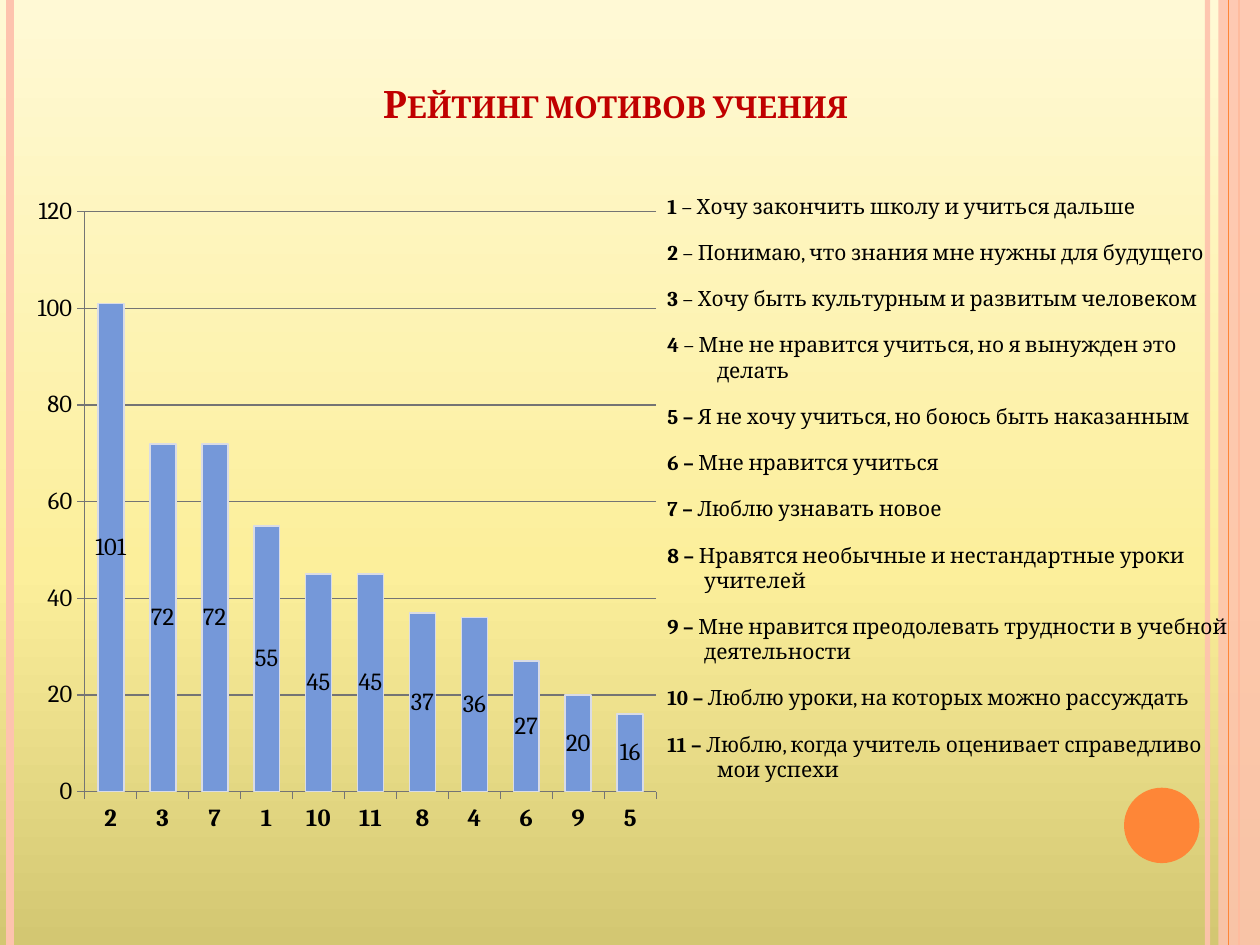
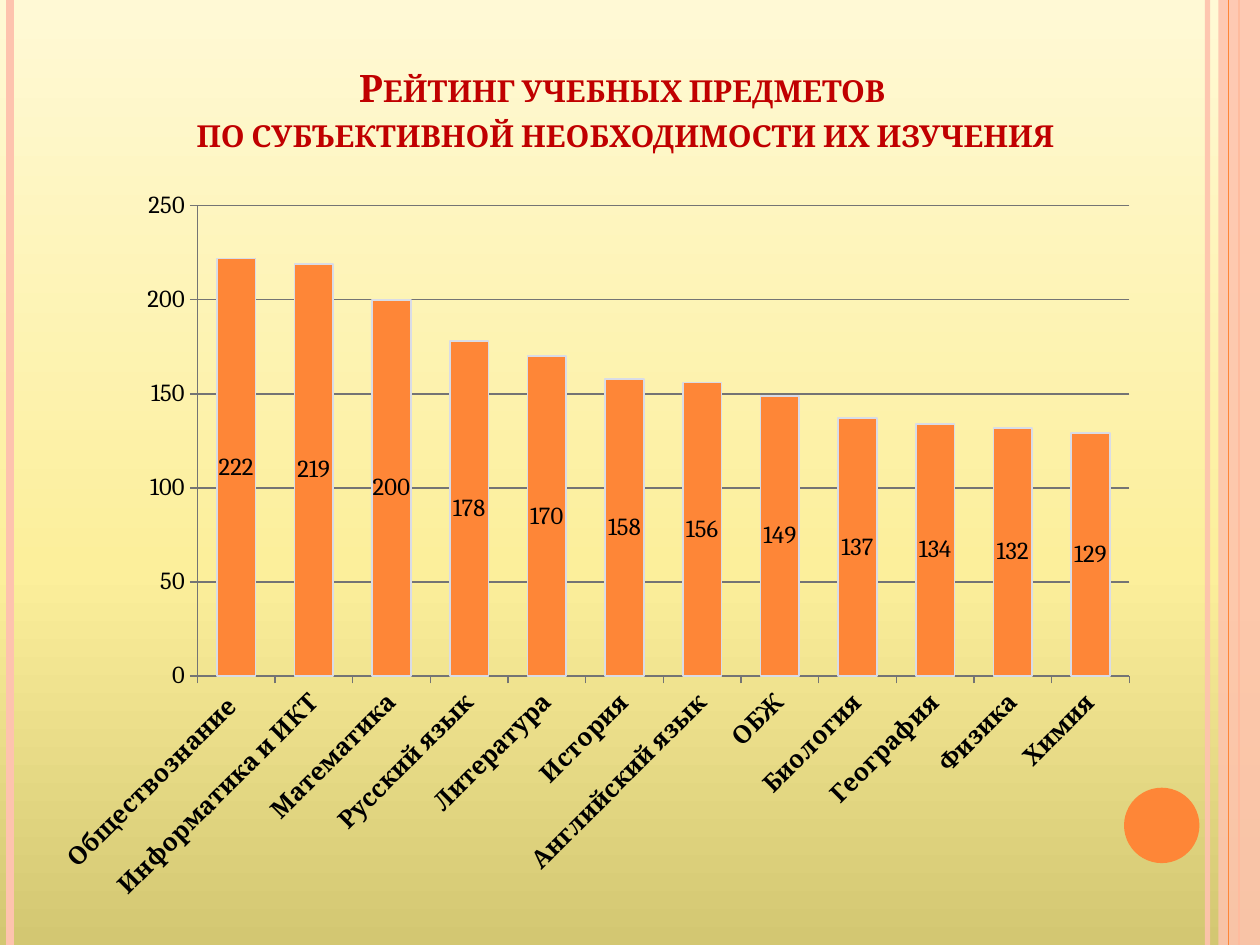
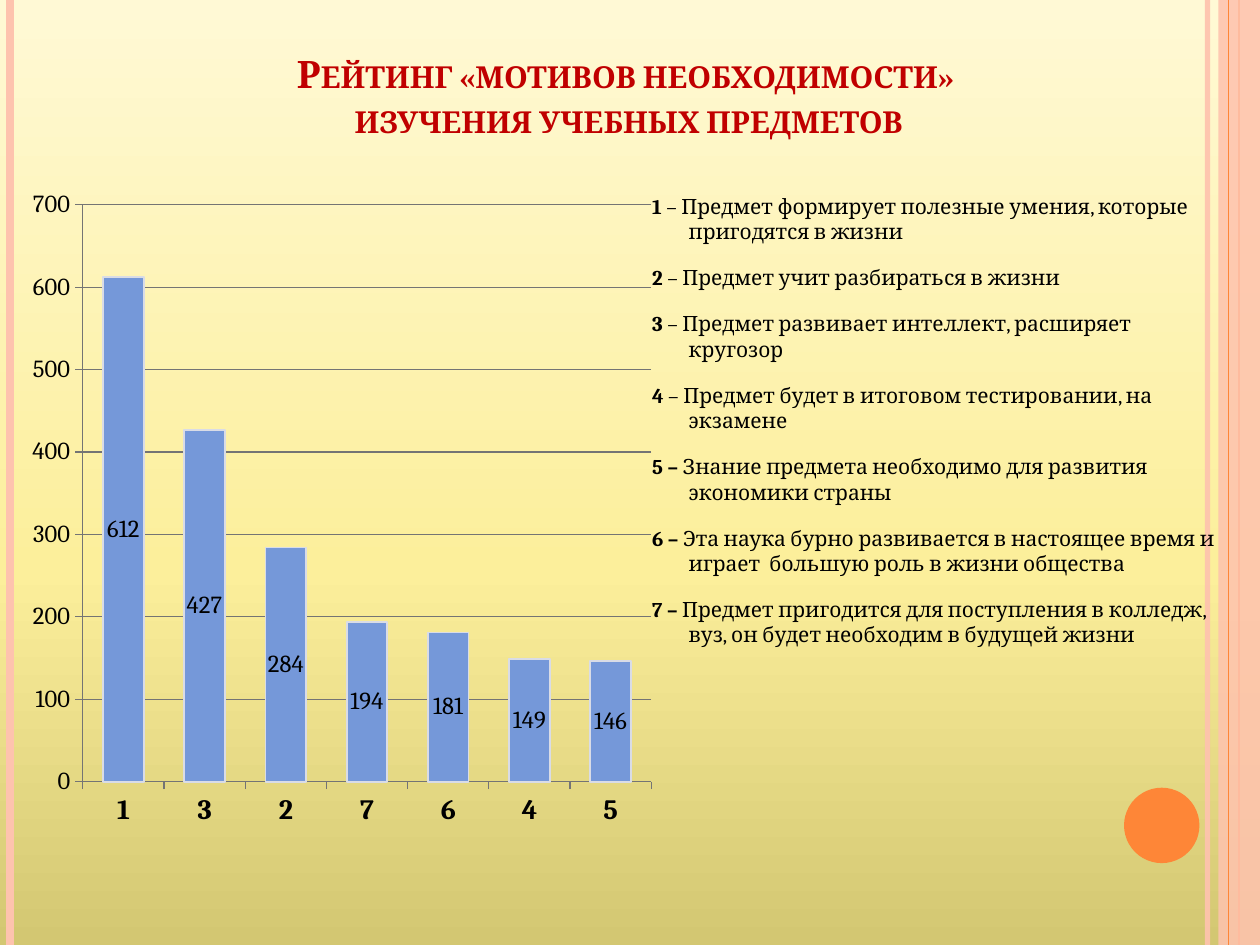
from pptx import Presentation
from pptx import util as u
from pptx.chart.data import CategoryChartData
from pptx.dml.color import RGBColor
from pptx.enum import chart as ch, shapes, text
from pptx.oxml import parse_xml
from pptx.oxml.ns import nsdecls, qn
from pptx.oxml.xmlchemy import OxmlElement
from pptx.text.text import Font
from copy import deepcopy

Cm, Pt = u.Cm, u.Pt

# ---- Shared look ----
FACE = "Cambria"
BLACK, RED, ORANGE, PINK, BLUE = "000000", "C00000", "FE8637", "FEC3AE", "7598D9"
GRID, BAR_EDGE = "747474", "D9DCE6"
BACKGROUND = [(0, "D3C772"), (40, "FCEF9B"), (100, "FFF9D5")]
TITLE_LEADING = 0.91  # height of one title line, cm

# ---- Content: places are left, top, width, height in cm ----
SLIDES = [
    dict(
        title=["Рейтинг мотивов учения"],
        title_at=(0.41, 1.57, 24, 2.01), lines_below=1,
        chart_at=(0.51, 3.73, 13, 13.34), plot_at=(1.71, 4.27, 11.52, 11.69),
        scale=(120, 20), bar=BLUE, category_size=14, angle=0,
        values={"2": 101, "3": 72, "7": 72, "1": 55, "10": 45, "11": 45,
                "8": 37, "4": 36, "6": 27, "9": 20, "5": 16},
        key_at=(13.2, 3.77, 11.99, 14),
        key=[
            ("1", " – Хочу закончить школу и учиться дальше", 1),
            ("2", " – Понимаю, что знания мне нужны для будущего", 1),
            ("3", " – Хочу быть культурным и развитым человеком", 1),
            ("4", " – Мне не нравится учиться, но я вынужден это делать", 1),
            ("5 – ", "Я не хочу учиться, но боюсь быть наказанным", 1),
            ("6 – ", "Мне нравится учиться", 1),
            ("7 – ", "Люблю узнавать новое", 1),
            ("8 – ", "Нравятся необычные и нестандартные уроки учителей", 0.74),
            ("9 – ", "Мне нравится преодолевать трудности в учебной деятельности", 0.74),
            ("10 – ", "Люблю уроки, на которых можно рассуждать", 1),
            ("11 – ", "Люблю, когда учитель оценивает справедливо мои успехи", 1),
        ],
    ),
    dict(
        title=["Рейтинг учебных предметов ", "по субъективной необходимости их изучения"],
        title_at=(0.61, 1.17, 24, 3), lines_below=1,
        chart_at=(0.79, 3.58, 22.43, 14.88), plot_at=(3.98, 4.15, 18.79, 9.48),
        scale=(250, 50), bar=ORANGE, category_size=14, angle=-45,
        values={"Обществознание ": 222, "Информатика и ИКТ": 219, "Математика": 200,
                "Русский язык": 178, "Литература": 170, "История": 158,
                "Английский язык": 156, "ОБЖ": 149, "Биология": 137,
                "География": 134, "Физика": 132, "Химия": 129},
    ),
    dict(
        title=["Рейтинг «мотивов необходимости»", " изучения учебных предметов"],
        title_at=(0.61, 0.97, 24, 2.01), lines_below=0,
        chart_at=(0.41, 3.58, 13, 13.34), plot_at=(1.67, 4.13, 11.46, 11.63),
        scale=(700, 100), bar=BLUE, category_size=16, angle=0,
        values={"1": 612, "3": 427, "2": 284, "7": 194, "6": 181, "4": 149, "5": 146},
        key_at=(12.89, 3.77, 11.99, 10),
        key=[
            ("1", " – Предмет формирует полезные умения, которые пригодятся в жизни", 0.74),
            ("2", " – Предмет учит разбираться в жизни", 0.74),
            ("3", " – Предмет развивает интеллект, расширяет кругозор", 0.74),
            ("4", " – Предмет будет в итоговом тестировании, на экзамене", 0.74),
            ("5 – ", "Знание предмета необходимо для развития экономики страны", 0.74),
            ("6 – ", "Эта наука бурно развивается в настоящее время и играет  большую роль в жизни общества", 0.74),
            ("7 – ", "Предмет пригодится для поступления в колледж, вуз, он будет необходим в будущей жизни", 0.74),
        ],
    ),
]


# ---- Helpers ----
def rgb(color):
    return RGBColor.from_string(color)


def place(part, at):
    part.left, part.top, part.width, part.height = map(Cm, at)


def style_font(font, size, color=BLACK, bold=False):
    font.name, font.size, font.bold = FACE, Pt(size), bold
    font.color.rgb = rgb(color)


def fade(part, percent):
    alpha = OxmlElement("a:alpha")
    alpha.set("val", str(percent * 1000))
    part.element.find(".//" + qn("a:srgbClr")).append(alpha)


# ---- Master: background, text styles, side bands ----
def style_master(master):
    fill = master.background.fill
    fill.gradient()
    fill.gradient_angle = 90
    stops = master.element.find(".//" + qn("a:gsLst"))
    stops.insert(1, deepcopy(stops[0]))
    for stop, (position, color) in zip(fill.gradient_stops, BACKGROUND):
        stop.position = position / 100
        stop.color.rgb = rgb(color)

    styles = master.element.find(qn("p:txStyles"))
    title_font, key_font = (
        styles.find(f"{qn(style)}/{qn('a:lvl1pPr')}/{qn('a:defRPr')}")
        for style in ("p:titleStyle", "p:bodyStyle"))
    style_font(Font(title_font), 21.6, RED, True)
    title_font.set("cap", "small")
    style_font(Font(key_font), 12)
    level = key_font.getparent()
    level.replace(level.find(qn("a:buChar")), OxmlElement("a:buNone"))


def add_bands(slide, master):
    def stripe(x, color, width):
        line = slide.shapes.add_connector(
            shapes.MSO_CONNECTOR.STRAIGHT, Cm(x), 0, Cm(x), Cm(19.05))
        line.line.color.rgb, line.line.width = rgb(color), Pt(width)
        line.element.spPr.append(OxmlElement("a:effectLst"))
        return line

    def solid(kind, color, at):
        shape = slide.shapes.add_shape(kind, *map(Cm, at))
        shape.shadow.inherit = False
        shape.fill.solid()
        shape.fill.fore_color.rgb = rgb(color)
        shape.line.fill.background()
        return shape

    inner = stripe(24.34, PINK, 3)
    left = stripe(0.21, PINK, 4.5)
    outer = stripe(24.98, ORANGE, 1.5)
    band = solid(shapes.MSO_SHAPE.RECTANGLE, PINK, (24.56, 0, 0.84, 19.05))
    edge = stripe(24.77, ORANGE, 0.75)
    disc = solid(shapes.MSO_SHAPE.OVAL, ORANGE, (22.66, 15.88, 1.52, 1.52))
    fade(inner, 93)
    fade(band, 87)
    # Move the bands to the master, behind its placeholders
    for index, part in enumerate((inner, left, outer, band, edge, disc), 2):
        master.shapes.element.insert(index, part.element)


# ---- Slide parts ----
def add_title(slide, item):
    title = slide.shapes.title
    place(title, item["title_at"])
    frame = title.text_frame
    frame.text = "\v".join(item["title"])
    frame.auto_size = text.MSO_AUTO_SIZE.NONE
    frame.vertical_anchor = text.MSO_ANCHOR.BOTTOM
    frame.margin_bottom = Cm(0.13 + item["lines_below"] * TITLE_LEADING)
    frame.paragraphs[0].alignment = text.PP_ALIGN.CENTER


def add_key(slide, item):
    body = slide.placeholders[1]
    place(body, item["key_at"])
    frame = body.text_frame
    frame.auto_size = text.MSO_AUTO_SIZE.NONE
    for index, (number, motive, hang) in enumerate(item["key"]):
        entry = frame.add_paragraph() if index else frame.paragraphs[0]
        entry.space_before = entry.space_after = Pt(6)
        properties = entry._p.get_or_add_pPr()
        properties.set("marL", str(Cm(hang)))
        properties.set("indent", str(-Cm(hang)))
        for words, bold in ((number, True), (motive, False)):
            run = entry.add_run()
            run.text, run.font.bold = words, bold


def set_plot_area(chart, chart_at, plot_at):
    left, top, width, height = chart_at
    x, y, w, h = plot_at
    fractions = ((x - left) / width, (y - top) / height, w / width, h / height)
    sides = "".join(f'<c:{side} val="{part:.4f}"/>' for side, part in zip("xywh", fractions))
    layout = parse_xml(
        f'<c:layout {nsdecls("c")}><c:manualLayout><c:layoutTarget val="inner"/>'
        f'<c:xMode val="edge"/><c:yMode val="edge"/>{sides}</c:manualLayout></c:layout>')
    area = chart.element.find(".//" + qn("c:plotArea"))
    for old in area.findall(qn("c:layout")):
        area.remove(old)
    area.insert(0, layout)


def add_rating(slide, item):
    data = CategoryChartData()
    data.categories = list(item["values"])
    data.add_series("Series 1", list(item["values"].values()))
    chart = slide.shapes.add_chart(
        ch.XL_CHART_TYPE.COLUMN_STACKED, *map(Cm, item["chart_at"]), data).chart
    chart.has_legend = chart.has_title = False
    style_font(chart.font, 18)
    set_plot_area(chart, item["chart_at"], item["plot_at"])

    # Bars and their values
    plot = chart.plots[0]
    plot.gap_width, plot.overlap, plot.vary_by_categories = 100, 100, False
    bars = plot.series[0].format
    bars.fill.solid()
    bars.fill.fore_color.rgb = rgb(item["bar"])
    bars.line.color.rgb, bars.line.width = rgb(BAR_EDGE), Pt(1)
    plot.has_data_labels = True
    labels = plot.data_labels
    labels.show_value, labels.position = True, ch.XL_LABEL_POSITION.CENTER
    style_font(labels.font, 14)

    # Axes
    names, scale = chart.category_axis, chart.value_axis
    scale.minimum_scale = 0
    scale.maximum_scale, scale.major_unit = item["scale"]
    scale.has_major_gridlines = True
    for line in (names.format.line, scale.format.line, scale.major_gridlines.format.line):
        line.color.rgb, line.width = rgb(GRID), Pt(0.75)
    style_font(names.tick_labels.font, item["category_size"], bold=True)
    style_font(scale.tick_labels.font, 14)
    turn = chart.element.find(f".//{qn('c:catAx')}/{qn('c:txPr')}/{qn('a:bodyPr')}")
    turn.set("rot", str(item["angle"] * 60000))


def main():
    deck = Presentation()
    deck.slide_width, deck.slide_height = Cm(25.4), Cm(19.05)
    master = deck.slide_master
    style_master(master)
    for index, item in enumerate(SLIDES):
        slide = deck.slides.add_slide(deck.slide_layouts[1 if "key" in item else 5])
        if index == 0:
            add_bands(slide, master)
        add_title(slide, item)
        if "key" in item:
            add_key(slide, item)
        add_rating(slide, item)
    deck.save("out.pptx")


if __name__ == "__main__":
    main()
